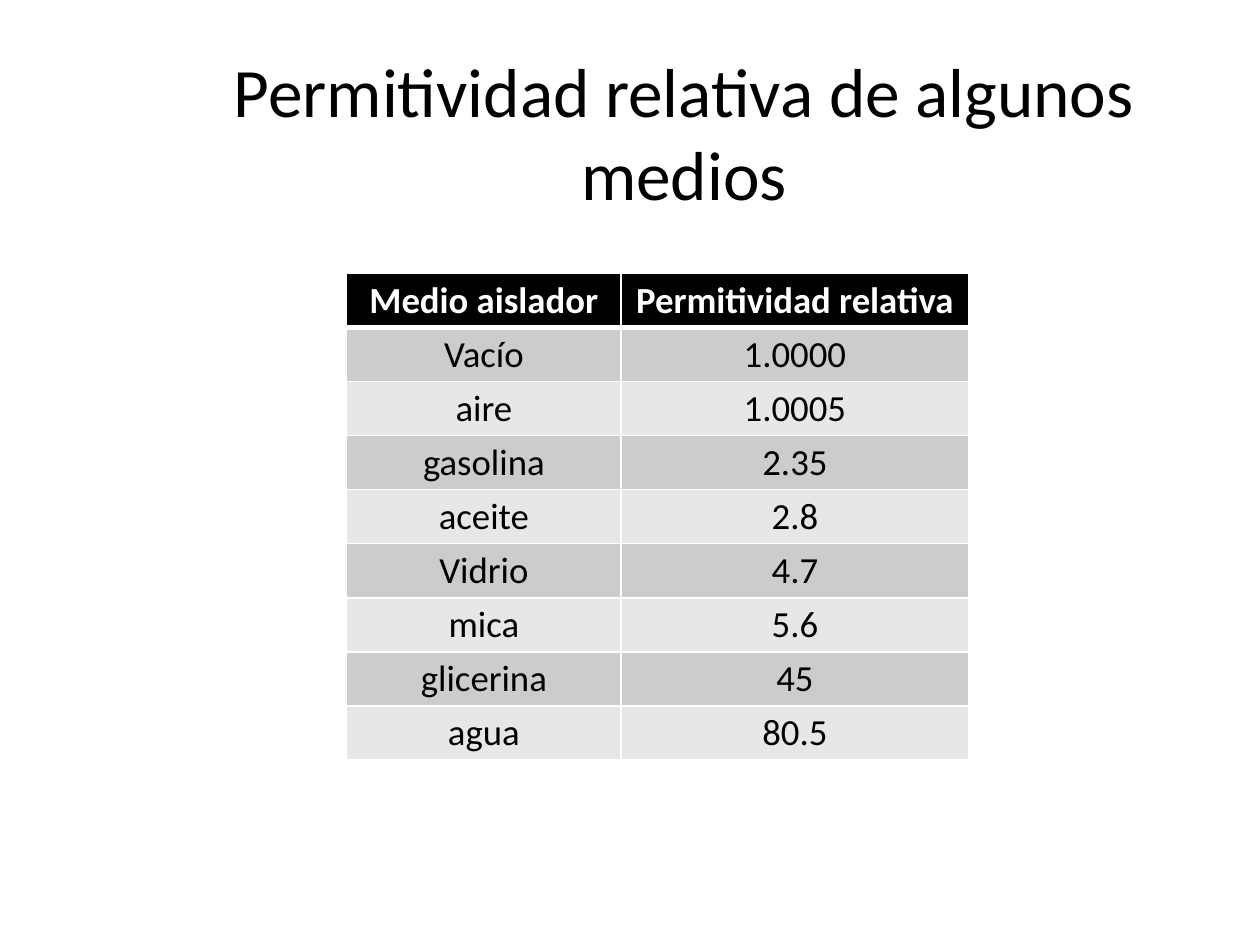
from lxml.etree import SubElement
from pptx import Presentation
from pptx.dml.color import RGBColor
from pptx.enum.text import MSO_ANCHOR, PP_ALIGN
from pptx.oxml.ns import qn
from pptx.util import Cm, Pt

BLACK = RGBColor(0x00, 0x00, 0x00)
WHITE = RGBColor(0xFF, 0xFF, 0xFF)
DARK_BAND = RGBColor(0xCC, 0xCC, 0xCC)
LIGHT_BAND = RGBColor(0xE7, 0xE7, 0xE7)

TITLE_FONT = {"name": "Calibri", "size": Pt(39.6), "bold": False}
HEADER_FONT = {"name": "Calibri", "size": Pt(21), "bold": True}
BODY_FONT = {**HEADER_FONT, "bold": False}
CELL_FORMAT = {
    "margin_left": Cm(0.18), "margin_right": Cm(0.18),
    "margin_top": Cm(0.1), "margin_bottom": Cm(0.1),
}


def write_centred(frame, text, font_format, color):
    paragraph = frame.paragraphs[0]
    paragraph.alignment = PP_ALIGN.CENTER
    run = paragraph.add_run()
    run.text = text
    for attribute, value in font_format.items():
        setattr(run.font, attribute, value)
    run.font.color.rgb = color


def add_border(cell, side, width):
    line = SubElement(cell._tc.get_or_add_tcPr(), qn(f"a:{side}"), w=str(Pt(width)))
    fill = SubElement(line, qn("a:solidFill"))
    SubElement(fill, qn("a:srgbClr"), val=str(WHITE))


prs = Presentation()
prs.slide_width, prs.slide_height = Cm(25.4), Cm(19.05)
slide = prs.slides.add_slide(prs.slide_layouts[6])

# Title
title = slide.shapes.add_textbox(Cm(4.1), Cm(1.32), Cm(19.38), Cm(2.67)).text_frame
title.word_wrap = True
title.vertical_anchor = MSO_ANCHOR.MIDDLE
write_centred(title, "Permitividad relativa de algunos medios", TITLE_FONT, BLACK)

# Permittivity table
media = [
    ("Medio aislador", "Permitividad relativa"),
    ("Vacío", "1.0000"),
    ("aire", "1.0005"),
    ("gasolina", "2.35"),
    ("aceite", "2.8"),
    ("Vidrio", "4.7"),
    ("mica", "5.6"),
    ("glicerina", "45"),
    ("agua", "80.5"),
]
column_widths = [Cm(5.53), Cm(7.01)]
row_height = Cm(1.08)
permittivity = slide.shapes.add_table(
    len(media), len(column_widths), Cm(6.99), Cm(5.51),
    sum(column_widths), row_height * len(media),
).table
for column, width in zip(permittivity.columns, column_widths):
    column.width = width

for row, values in enumerate(media):
    permittivity.rows[row].height = row_height
    # Black header, then alternating grey bands
    if row == 0:
        font_format, color, band = HEADER_FONT, WHITE, BLACK
    else:
        font_format, color = BODY_FONT, BLACK
        band = DARK_BAND if row % 2 else LIGHT_BAND
    # A thicker rule separates the header from the body
    borders = {"lnL": 1, "lnR": 1, "lnT": 3 if row == 1 else 1, "lnB": 3 if row == 0 else 1}
    for col, value in enumerate(values):
        cell = permittivity.cell(row, col)
        for attribute, setting in CELL_FORMAT.items():
            setattr(cell, attribute, setting)
        write_centred(cell.text_frame, value, font_format, color)
        for side, width in borders.items():
            add_border(cell, side, width)
        cell.fill.solid()
        cell.fill.fore_color.rgb = band

prs.save("out.pptx")
